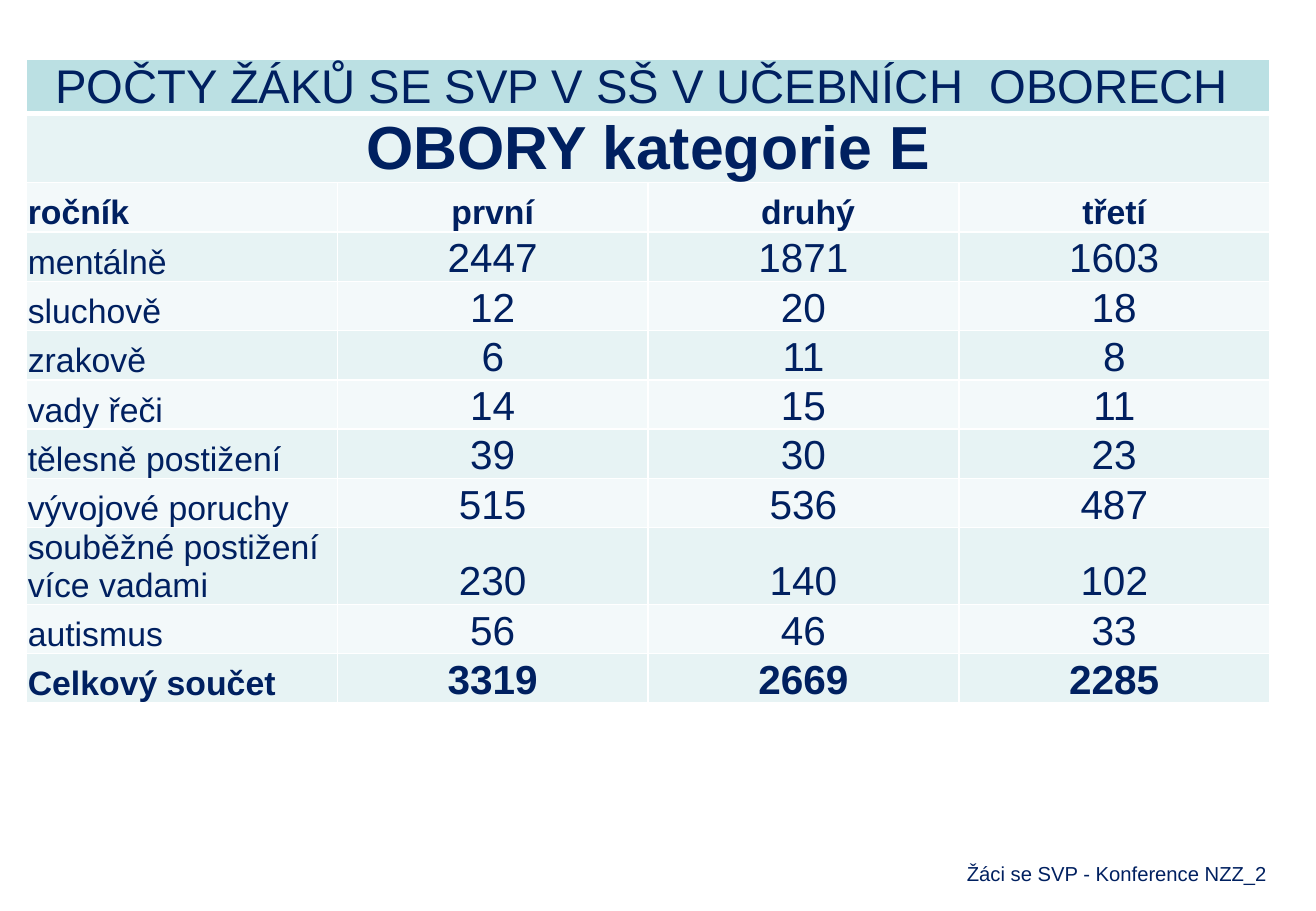
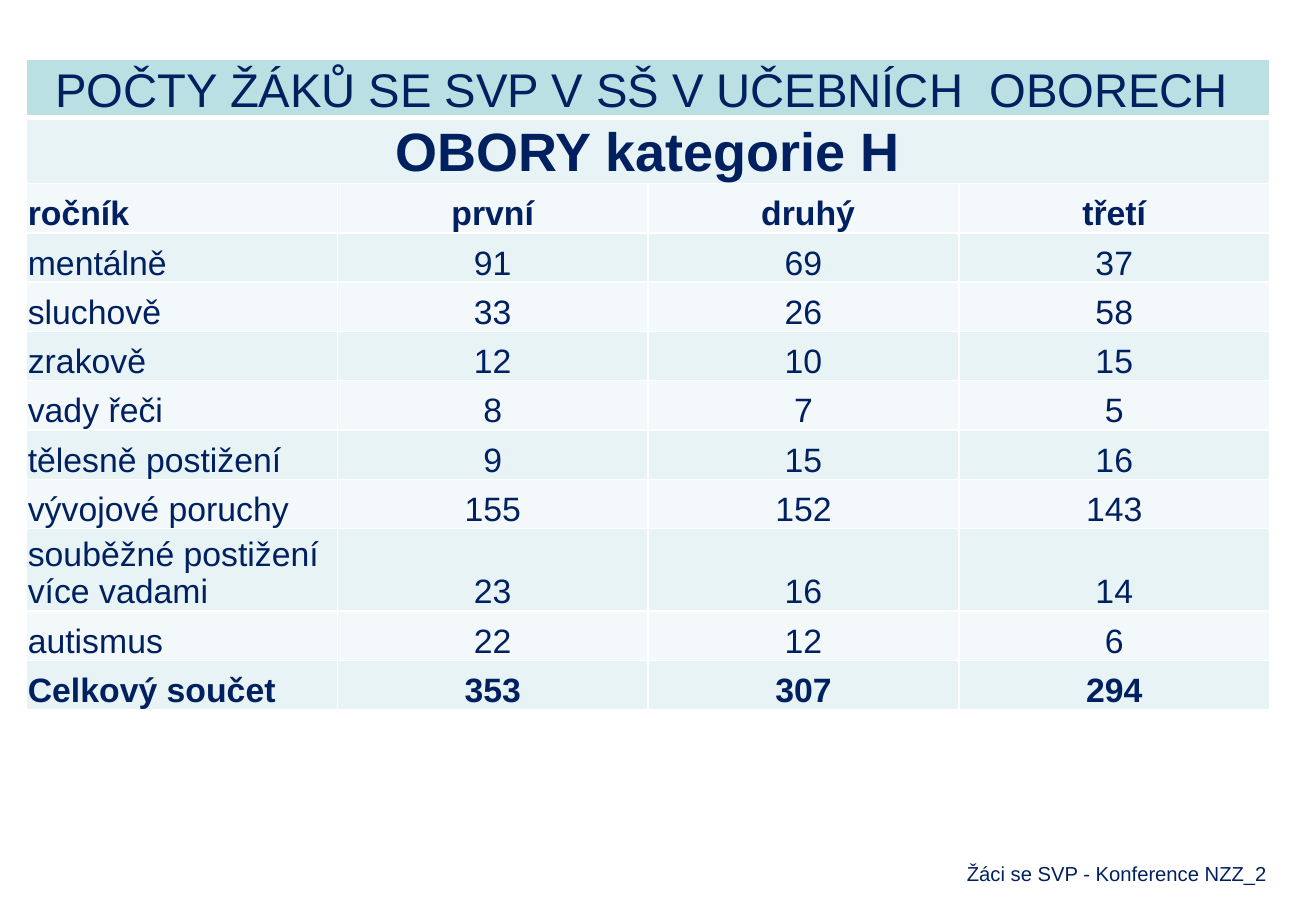
from lxml import etree
from pptx import Presentation
from pptx.dml.color import RGBColor
from pptx.enum.text import MSO_ANCHOR, PP_ALIGN
from pptx.oxml.ns import qn
from pptx.util import Pt

LEFT, CENTER, RIGHT = PP_ALIGN.LEFT, PP_ALIGN.CENTER, PP_ALIGN.RIGHT
BOTTOM, MIDDLE = MSO_ANCHOR.BOTTOM, MSO_ANCHOR.MIDDLE

# Content
TITLE = "POČTY ŽÁKŮ SE SVP V SŠ V UČEBNÍCH  OBORECH "
FOOTER = "Žáci se SVP - Konference NZZ_2"
YEARS = ["ročník", "první", " druhý", "třetí"]
GROUPS = ["mentálně", "sluchově", "zrakově", "vady řeči", "tělesně postižení",
          "vývojové poruchy", "souběžné postižení více vadami", "autismus",
          "Celkový součet"]
CATEGORIES = [
    {"heading": "OBORY kategorie E", "heading_size": 36, "count_size": 24,
     "table_height": 392.4,
     "counts": [(2447, 1871, 1603), (12, 20, 18), (6, 11, 8), (14, 15, 11),
                (39, 30, 23), (515, 536, 487), (230, 140, 102), (56, 46, 33),
                (3319, 2669, 2285)]},
    {"heading": "OBORY kategorie H", "heading_size": 32, "count_size": 20,
     "table_height": 385.2,
     "counts": [(91, 69, 37), (33, 26, 58), (12, 10, 15), (8, 7, 5),
                (9, 15, 16), (155, 152, 143), (23, 16, 14), (22, 12, 6),
                (353, 307, 294)]},
]

# Shared style
FONT = "Arial"
NAVY = RGBColor(0x00, 0x20, 0x60)
WHITE = RGBColor(0xFF, 0xFF, 0xFF)
TITLE_FILL = RGBColor(0xBB, 0xE0, 0xE3)
BANDS = [RGBColor(0xF3, 0xF9, 0xFA), RGBColor(0xE7, 0xF3, 0xF4)]
TITLE_SIZE, LABEL_SIZE, FOOTER_SIZE = 28, 20, 12
TITLE_ROW, HEADING_ROW, YEAR_ROW = 0, 1, 2
TABLE_LEFT, TABLE_TOP = 15.75, 35.2
COLUMN_WIDTH, ROW_HEIGHT = 184.2, 29.23
CELL_INSET = 0.75
THIN, THICK = 1, 3


def write(text_frame, text, size, bold, alignment):
    text_frame.text = text
    paragraph = text_frame.paragraphs[0]
    paragraph.alignment = alignment
    font = paragraph.runs[0].font
    font.name, font.size, font.bold = FONT, Pt(size), bold
    font.color.rgb = NAVY


def add_borders(cell, top, bottom):
    properties = cell._tc.get_or_add_tcPr()
    for side, width in (("L", THIN), ("R", THIN), ("T", top), ("B", bottom)):
        line = etree.SubElement(properties, qn(f"a:ln{side}"), w=str(Pt(width)))
        fill = etree.SubElement(line, qn("a:solidFill"))
        etree.SubElement(fill, qn("a:srgbClr"), val=str(WHITE))


def style_cell(cell, row):
    add_borders(cell,
                top=THICK if row == HEADING_ROW else THIN,
                bottom=THICK if row == TITLE_ROW else THIN)
    cell.fill.solid()
    cell.fill.fore_color.rgb = TITLE_FILL if row == TITLE_ROW else BANDS[row % 2]
    cell.vertical_anchor = BOTTOM
    cell.margin_left = cell.margin_right = cell.margin_top = Pt(CELL_INSET)
    cell.margin_bottom = 0


def add_counts_table(slide, category):
    rows = [[TITLE], [category["heading"]], YEARS]
    rows += [[group, *counts] for group, counts in zip(GROUPS, category["counts"])]
    total_row = len(rows) - 1
    columns = len(YEARS)
    table_shape = slide.shapes.add_table(
        len(rows), columns, Pt(TABLE_LEFT), Pt(TABLE_TOP),
        Pt(columns * COLUMN_WIDTH), Pt(len(rows) * ROW_HEIGHT))
    table = table_shape.table

    for row, values in enumerate(rows):
        table.rows[row].height = Pt(ROW_HEIGHT)
        for column in range(columns):
            style_cell(table.cell(row, column), row)
        if len(values) == 1:
            table.cell(row, 0).merge(table.cell(row, columns - 1))

        bold = row in (HEADING_ROW, YEAR_ROW, total_row)
        for column, value in enumerate(values):
            if row == TITLE_ROW:
                size = TITLE_SIZE
            elif row == HEADING_ROW:
                size = category["heading_size"]
            elif row > YEAR_ROW and column > 0:
                size = category["count_size"]
            else:
                size = LABEL_SIZE
            is_label = row >= YEAR_ROW and column == 0
            write(table.cell(row, column).text_frame, str(value), size, bold,
                  LEFT if is_label else CENTER)

    # The frame leaves room for rows that grow with their text
    table_shape.height = Pt(category["table_height"])


def add_footer(slide):
    text_frame = slide.shapes.add_textbox(
        Pt(243.2), Pt(508.3), Pt(514.8), Pt(19.4)).text_frame
    text_frame.word_wrap = True
    text_frame.vertical_anchor = MIDDLE
    write(text_frame, FOOTER, FOOTER_SIZE, False, RIGHT)


def main():
    presentation = Presentation()
    presentation.slide_width, presentation.slide_height = Pt(780), Pt(540)
    blank_layout = presentation.slide_layouts[6]
    for category in CATEGORIES:
        slide = presentation.slides.add_slide(blank_layout)
        add_counts_table(slide, category)
        add_footer(slide)
    presentation.save("out.pptx")


if __name__ == "__main__":
    main()
